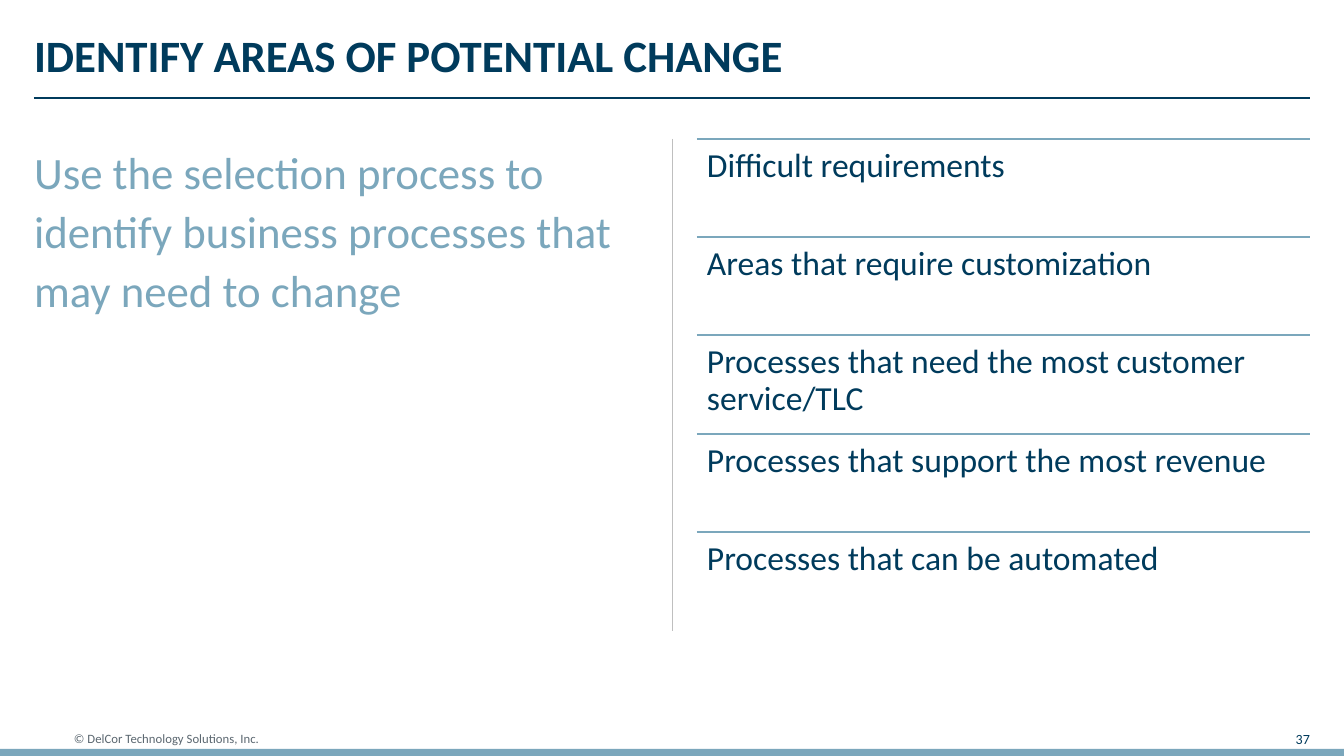
from lxml import etree
from pptx import Presentation
from pptx.dml.color import RGBColor
from pptx.enum.shapes import MSO_CONNECTOR, MSO_SHAPE
from pptx.enum.text import MSO_ANCHOR, PP_ALIGN
from pptx.oxml.ns import qn
from pptx.util import Emu, Pt

RECTANGLE = MSO_SHAPE.RECTANGLE
STRAIGHT = MSO_CONNECTOR.STRAIGHT
TOP, MIDDLE = MSO_ANCHOR.TOP, MSO_ANCHOR.MIDDLE
LEFT, RIGHT = PP_ALIGN.LEFT, PP_ALIGN.RIGHT

PX = 914400 / 134.4
WIDTH, HEIGHT = 1344, 756
MARGIN = 34
CONTENT_RIGHT = WIDTH - MARGIN
CONTENT_TOP, CONTENT_HEIGHT = 139, 492
COLUMN_WIDTH = 613
LIST_LEFT = CONTENT_RIGHT - COLUMN_WIDTH

COLORS = {
    "navy": "003B5C",
    "blue": "7BA7BC",
    "slate": "5B6770",
    "gray": "BFBFBF",
}

AREAS = [
    "Difficult requirements",
    "Areas that require customization",
    "Processes that need the most customer service/TLC",
    "Processes that support the most revenue",
    "Processes that can be automated",
]


def px(length):
    return Emu(round(length * PX))


class SlideBuilder:
    font_name = "Calibri"

    def __init__(self, slide):
        self.slide = slide

    def color(self, name):
        return RGBColor.from_string(COLORS[name])

    def bar(self, left, top, width, height, color):
        shape = self.slide.shapes.add_shape(
            RECTANGLE, px(left), px(top), px(width), px(height))
        shape.shadow.inherit = False
        shape.fill.solid()
        shape.fill.fore_color.rgb = self.color(color)
        shape.line.fill.background()

    def rule(self, start, end, color, weight=1):
        connector = self.slide.shapes.add_connector(
            STRAIGHT, *(px(value) for value in start + end))
        connector.line.color.rgb = self.color(color)
        connector.line.width = Pt(weight)
        properties = connector._element.spPr
        etree.SubElement(properties, qn("a:effectLst"))

    def text(self, text, left, top, width, height, size, color, bold=False,
             inset=0, anchor=TOP, align=LEFT, spacing=1.0):
        box = self.slide.shapes.add_textbox(
            px(left), px(top), px(width), px(height))
        frame = box.text_frame
        frame_format = {"word_wrap": True, "vertical_anchor": anchor}
        for side in ("left", "top", "right", "bottom"):
            frame_format[f"margin_{side}"] = px(inset)
        for name, value in frame_format.items():
            setattr(frame, name, value)

        paragraph = frame.paragraphs[0]
        paragraph.alignment = align
        paragraph.line_spacing = spacing
        run = paragraph.add_run()
        run.text = text
        font_format = {"name": self.font_name, "size": Pt(size), "bold": bold}
        for name, value in font_format.items():
            setattr(run.font, name, value)
        run.font.color.rgb = self.color(color)


def main():
    presentation = Presentation()
    presentation.slide_width = px(WIDTH)
    presentation.slide_height = px(HEIGHT)
    slide = presentation.slides.add_slide(presentation.slide_layouts[6])
    builder = SlideBuilder(slide)

    builder.bar(0, 749, WIDTH, 12, "blue")
    builder.text("© DelCor Technology Solutions, Inc.", 74, 727, 258, 23,
                 6.8, "slate", anchor=MIDDLE)
    builder.text("37", 1262, 727, 48, 23, 7.5, "navy",
                 anchor=MIDDLE, align=RIGHT)

    builder.rule((MARGIN, 98), (CONTENT_RIGHT, 98), "navy")
    builder.rule((WIDTH // 2, CONTENT_TOP),
                 (WIDTH // 2, CONTENT_TOP + CONTENT_HEIGHT), "gray", 0.5)

    builder.text("IDENTIFY AREAS OF POTENTIAL CHANGE", MARGIN, 34,
                 CONTENT_RIGHT - MARGIN, 64, 24, "navy", bold=True,
                 spacing=0.9)
    builder.text("Use the selection process to identify business processes "
                 "that may need to change", MARGIN, CONTENT_TOP,
                 COLUMN_WIDTH, CONTENT_HEIGHT, 24, "blue", spacing=1.1)

    for index, area in enumerate(AREAS):
        top = CONTENT_TOP + CONTENT_HEIGHT * index // len(AREAS)
        builder.rule((LIST_LEFT, top), (CONTENT_RIGHT, top), "blue")
        builder.text(area, LIST_LEFT, top, COLUMN_WIDTH,
                     CONTENT_HEIGHT // len(AREAS), 18, "navy", inset=10,
                     spacing=0.9)

    presentation.save("out.pptx")


if __name__ == "__main__":
    main()
